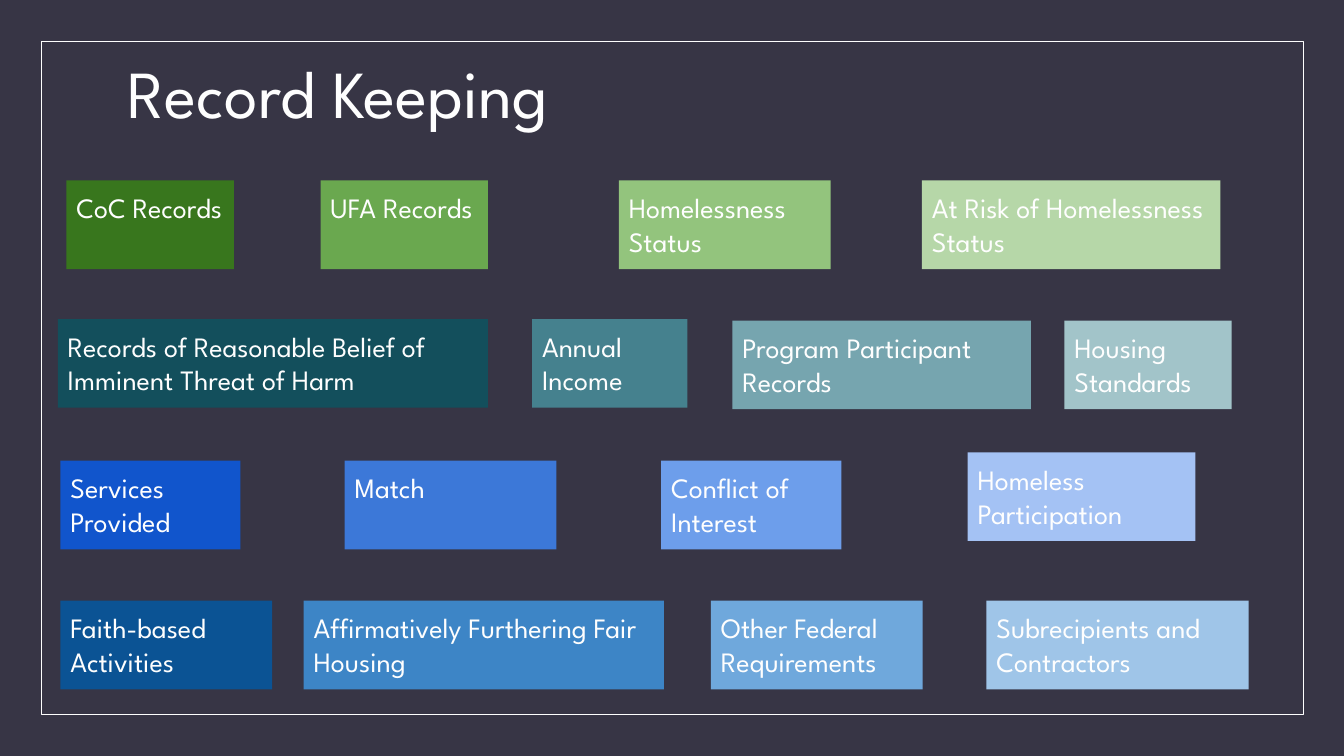
from dataclasses import dataclass

from pptx import Presentation
from pptx import util as u
from pptx.dml import color
from pptx.enum import shapes, text


@dataclass(frozen=True)
class Theme:
    background: str = "373545"
    ink: str = "FEFEFE"
    font: str = "League Spartan"
    title_size: int = 48
    card_size: int = 20
    frame_width: float = 0.75


THEME = Theme()
SLIDE_WIDTH, SLIDE_HEIGHT = u.Inches(13.333), u.Inches(7.5)
COLUMN, ROW = SLIDE_WIDTH / 100, SLIDE_HEIGHT / 100
FIRST_TOP, ROW_PITCH, CARD_HEIGHT = 23.87, 18.53, 11.73

CARD_ROWS = [
    [
        ("CoC Records", 4.95, 12.45, 0, "38761D"),
        ("UFA Records", 23.85, 12.45, 0, "6AA84F"),
        ("Homelessness Status", 46.05, 15.75, 0, "93C47D"),
        ("At Risk of Homelessness Status", 68.6, 22.2, 0, "B6D7A8"),
    ],
    [
        ("Records of Reasonable Belief of Imminent Threat of Harm", 4.3, 32, -0.2, "134F5C"),
        ("Annual Income", 39.6, 11.55, -0.2, "45818E"),
        ("Program Participant Records", 54.5, 22.2, 0, "76A5AF"),
        ("Housing Standards", 79.2, 12.45, 0, "A2C4C9"),
    ],
    [
        ("Services Provided", 4.5, 13.4, 0, "1155CC"),
        ("Match", 25.65, 15.75, 0, "3C78D8"),
        ("Conflict of Interest", 49.2, 13.4, 0, "6D9EEB"),
        ("Homeless Participation", 72, 16.95, -1.1, "A4C2F4"),
    ],
    [
        ("Faith-based Activities", 4.5, 15.75, 0, "0B5394"),
        ("Affirmatively Furthering Fair Housing", 22.6, 26.8, 0, "3D85C6"),
        ("Other Federal Requirements", 52.9, 15.75, 0, "6FA8DC"),
        ("Subrecipients and Contractors", 73.4, 19.5, 0, "9FC5E8"),
    ],
]


def rgb(value):
    return color.RGBColor.from_string(value)


def place(left, top, width, height):
    return (
        round(left * COLUMN),
        round(top * ROW),
        round(width * COLUMN),
        round(height * ROW),
    )


def write(shape, wording, size, anchor):
    frame = shape.text_frame
    frame.word_wrap = True
    frame.vertical_anchor = anchor
    paragraph = frame.paragraphs[0]
    paragraph.text = wording
    paragraph.alignment = text.PP_ALIGN.LEFT
    paragraph.font.name = THEME.font
    paragraph.font.size = u.Pt(size)
    paragraph.font.color.rgb = rgb(THEME.ink)
    return frame


def add_rectangle(slide, *box):
    shape = slide.shapes.add_shape(shapes.MSO_SHAPE.RECTANGLE, *place(*box))
    shape.shadow.inherit = False
    return shape


def add_frame(slide):
    shape = add_rectangle(slide, 3.08, 5.47, 93.9, 89.07)
    shape.fill.background()
    shape.line.color.rgb = rgb(THEME.ink)
    shape.line.width = u.Pt(THEME.frame_width)


def add_title(slide, wording):
    shape = slide.shapes.add_textbox(*place(8.78, 2.8, 82.5, 20))
    frame = write(shape, wording, THEME.title_size, text.MSO_ANCHOR.MIDDLE)
    frame.paragraphs[0].line_spacing = 0.9


def add_card(slide, wording, left, top, width, fill):
    shape = add_rectangle(slide, left, top, width, CARD_HEIGHT)
    shape.fill.solid()
    shape.fill.fore_color.rgb = rgb(fill)
    shape.line.fill.background()
    frame = write(shape, wording, THEME.card_size, text.MSO_ANCHOR.TOP)
    frame.margin_left = frame.margin_right = u.Inches(0.1)
    frame.margin_top = frame.margin_bottom = u.Inches(0.1)
    frame.auto_size = text.MSO_AUTO_SIZE.SHAPE_TO_FIT_TEXT


def main():
    presentation = Presentation()
    presentation.slide_width = SLIDE_WIDTH
    presentation.slide_height = SLIDE_HEIGHT
    slide = presentation.slides.add_slide(presentation.slide_layouts[6])
    slide.background.fill.solid()
    slide.background.fill.fore_color.rgb = rgb(THEME.background)

    add_frame(slide)
    add_title(slide, "Record Keeping")
    for index, cards in enumerate(CARD_ROWS):
        row_top = FIRST_TOP + index * ROW_PITCH
        for wording, left, width, nudge, fill in cards:
            add_card(slide, wording, left, row_top + nudge, width, fill)

    presentation.save("out.pptx")


if __name__ == "__main__":
    main()
